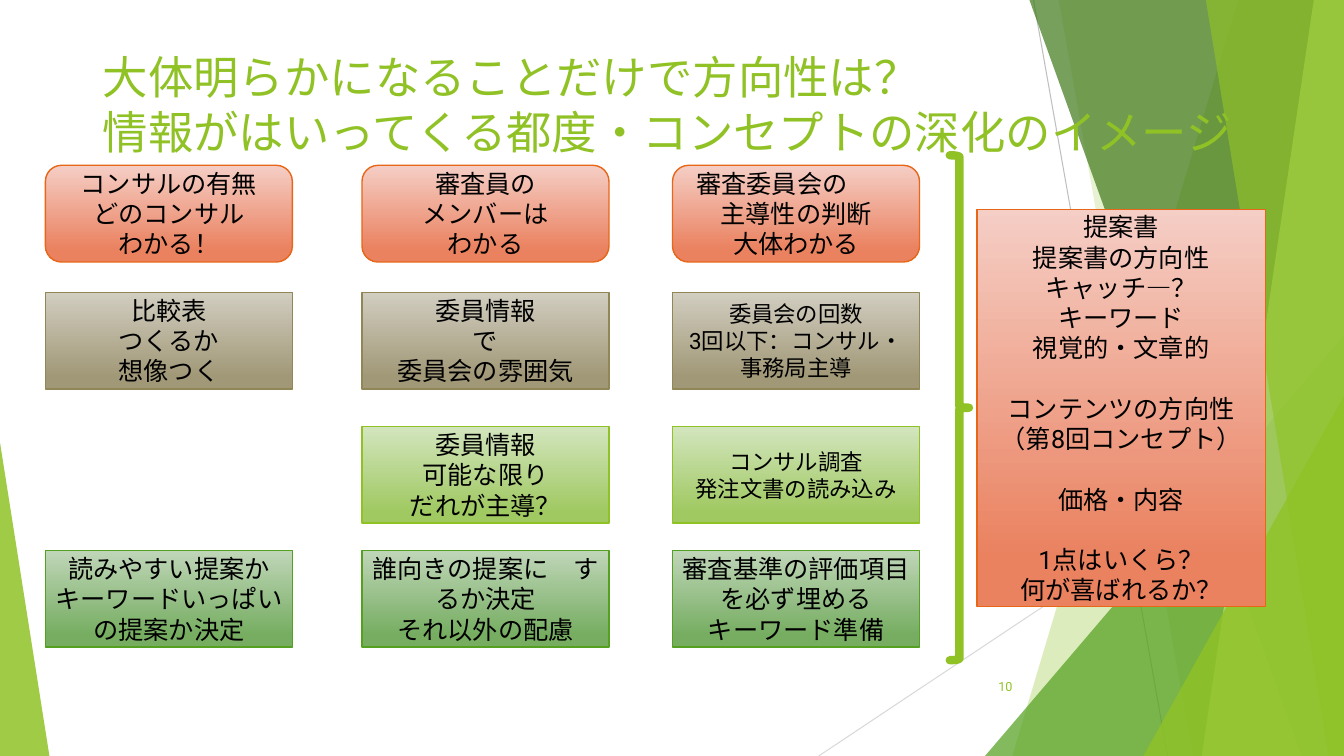
from lxml.etree import SubElement
from pptx import Presentation
from pptx.dml.color import RGBColor
from pptx.enum.shapes import MSO_CONNECTOR, MSO_SHAPE
from pptx.enum.text import MSO_ANCHOR, MSO_AUTO_SIZE, PP_ALIGN
from pptx.oxml.ns import qn
from pptx.util import Inches, Pt

FONT = "Roboto"
LIME = "90C226"
ORANGE = ("F5CEC5", "EA815F", "E76618")
COLUMN_LEFTS = (0.45, 3.59, 6.67)
CARD_WIDTH, CARD_HEIGHT = 2.45, 0.96
LINE_PITCH = 1.2

CARD_ROWS = [
    (1.64, MSO_SHAPE.ROUNDED_RECTANGLE, ORANGE, [
        (18, ["コンサルの有無", "どのコンサル", "わかる！"]),
        (18, ["審査員の", "メンバーは", "わかる"]),
        (18, ["審査委員会の", "主導性の判断", "大体わかる"]),
    ]),
    (2.9, MSO_SHAPE.RECTANGLE, ("D1CDC0", "A19877", "918655"), [
        (18, ["比較表", "つくるか", "想像つく"]),
        (18, ["委員情報", "で", "委員会の雰囲気"]),
        (16, ["委員会の回数", "3回以下：コンサル・", "事務局主導"]),
    ]),
    (4.23, MSO_SHAPE.RECTANGLE, ("D3E5BE", "A0C962", LIME), [
        None,
        (18, ["委員情報", "可能な限り", "だれが主導？"]),
        (16, ["コンサル調査", "発注文書の読み込み"]),
    ]),
    (5.46, MSO_SHAPE.RECTANGLE, ("C0D6B9", "76AD61", "54A021"), [
        (18, ["読みやすい提案か", "キーワードいっぱいの提案か決定"]),
        (18, ["誰向きの提案に　するか決定", "それ以外の配慮"]),
        (18, ["審査基準の評価項目を必ず埋める", "キーワード準備"]),
    ]),
]
PROPOSAL_GROUPS = [
    ["提案書", "提案書の方向性", "キャッチ―？", "キーワード", "視覚的・文章的"],
    ["コンテンツの方向性", "（第8回コンセプト）"],
    ["価格・内容"],
    ["1点はいくら？", "何が喜ばれるか？"],
]


def color(value):
    return RGBColor.from_string(value)


def add_run(paragraph, text, size, font_color):
    run = paragraph.add_run()
    run.text = text
    run.font.name = FONT
    run.font.size = Pt(size)
    run.font.color.rgb = color(font_color)


def fill_translucent(shape, fill_color, opacity):
    shape.shadow.inherit = False
    shape.fill.solid()
    shape.fill.fore_color.rgb = color(fill_color)
    shape.line.fill.background()
    fill = shape._element.spPr.find(qn("a:solidFill"))
    SubElement(fill[0], qn("a:alpha"), val=str(opacity * 1000))


def add_thin_line(slide, start, end, line_color):
    points = [Inches(value) for value in start + end]
    line = slide.shapes.add_connector(MSO_CONNECTOR.STRAIGHT, *points)
    line.line.color.rgb = color(line_color)
    line.line.width = Pt(0.75)
    SubElement(line._element.spPr, qn("a:effectLst"))


def add_band(slide, top_left, top_right, bottom_left, fill_color, opacity):
    corners = [(top_left, 0), (top_right, 0), (13.33, 7.5), (bottom_left, 7.5)]
    points = [(Inches(x), Inches(y)) for x, y in corners]
    builder = slide.shapes.build_freeform(*points[0], scale=1.0)
    builder.add_line_segments(points[1:], close=True)
    fill_translucent(builder.convert_to_shape(), fill_color, opacity)


def add_triangle(slide, left, top, width, apex, fill_color, opacity):
    shape = slide.shapes.add_shape(
        MSO_SHAPE.ISOSCELES_TRIANGLE,
        Inches(left), Inches(top), Inches(width), Inches(7.5 - top))
    shape.adjustments[0] = apex
    fill_translucent(shape, fill_color, opacity)


def add_backdrop(slide):
    add_thin_line(slide, (10.25, 0), (11.58, 7.5), "BFBFBF")
    add_thin_line(slide, (13.33, 4.03), (8.12, 7.5), "D9D9D9")
    add_band(slide, 12.28, 13.33, 10.04, LIME, 30)
    add_band(slide, 10.5, 13.33, 11.83, LIME, 20)
    add_triangle(slide, 9.77, 3.33, 3.56, 1, "54A021", 72)
    add_band(slide, 10.21, 13.33, 12.91, "3F7819", 70)
    add_band(slide, 13.03, 13.33, 11.92, "C0E474", 70)
    add_band(slide, 11.96, 13.33, 13.18, LIME, 65)
    add_triangle(slide, 11.34, 3.93, 1.99, 1, LIME, 80)
    add_triangle(slide, 0, 4.39, 0.49, 0, LIME, 85)


def set_title(slide, lines):
    title = slide.shapes.title
    title.left, title.top = Inches(0.92), Inches(0.44)
    title.width, title.height = Inches(11.5), Inches(1.05)
    frame = title.text_frame
    frame.auto_size = MSO_AUTO_SIZE.NONE
    frame.vertical_anchor = MSO_ANCHOR.TOP
    paragraph = frame.paragraphs[0]
    paragraph.alignment = PP_ALIGN.LEFT
    for index, line in enumerate(lines):
        if index:
            paragraph.add_line_break()
        add_run(paragraph, line, 32.4, LIME)
    slide.shapes._spTree.append(title._element)


def add_page_number(slide, number):
    box = slide.shapes.add_textbox(
        Inches(9.39), Inches(6.61), Inches(0.75), Inches(0.4))
    box.text_frame.word_wrap = True
    box.text_frame.vertical_anchor = MSO_ANCHOR.MIDDLE
    paragraph = box.text_frame.paragraphs[0]
    paragraph.alignment = PP_ALIGN.RIGHT
    add_run(paragraph, number, 9, LIME)


def add_card(slide, kind, bounds, colors, groups, size):
    shape = slide.shapes.add_shape(kind, *[Inches(value) for value in bounds])
    shape.shadow.inherit = False
    shape.fill.gradient()
    shape.fill.gradient_angle = 270
    for stop, position, stop_color in zip(
            shape.fill.gradient_stops, (0, 0.88), colors):
        stop.position = position
        stop.color.rgb = color(stop_color)
    shape.line.color.rgb = color(colors[2])
    shape.line.width = Pt(1)
    frame = shape.text_frame
    frame.word_wrap = True
    frame.vertical_anchor = MSO_ANCHOR.MIDDLE
    paragraph = None
    for group in groups:
        for index, line in enumerate(group):
            starts_group = paragraph is not None and index == 0
            paragraph = (frame.paragraphs[0] if paragraph is None
                         else frame.add_paragraph())
            paragraph.alignment = PP_ALIGN.CENTER
            if starts_group:
                paragraph.space_before = Pt(size * LINE_PITCH)
            add_run(paragraph, line, size, "000000")
    return shape


def indent_first_line(shape, indent):
    paragraph = shape.text_frame.paragraphs[0]
    paragraph.alignment = PP_ALIGN.LEFT
    paragraph._p.get_or_add_pPr().set("marL", str(Inches(indent)))


def add_cards(slide):
    for top, kind, colors, cards in CARD_ROWS:
        for left, card in zip(COLUMN_LEFTS, cards):
            if card:
                size, lines = card
                bounds = (left, top, CARD_WIDTH, CARD_HEIGHT)
                shape = add_card(slide, kind, bounds, colors, [lines], size)
                if lines[0] == "審査委員会の":
                    indent_first_line(shape, 0.09)


def add_brace(slide):
    brace = slide.shapes.add_shape(
        MSO_SHAPE.RIGHT_BRACE,
        Inches(9.42), Inches(1.54), Inches(0.19), Inches(5.01))
    brace.shadow.inherit = False
    brace.fill.background()
    brace.line.color.rgb = color(LIME)
    brace.line.width = Pt(6)
    brace._element.spPr.find(qn("a:ln")).set("cap", "rnd")


def main():
    presentation = Presentation()
    presentation.slide_width = Inches(13.33)
    presentation.slide_height = Inches(7.5)
    slide = presentation.slides.add_slide(presentation.slide_layouts[5])
    add_backdrop(slide)
    set_title(slide, ["大体明らかになることだけで方向性は？",
                      "情報がはいってくる都度・コンセプトの深化のイメージ"])
    add_page_number(slide, "10")
    add_cards(slide)
    add_brace(slide)
    add_card(slide, MSO_SHAPE.RECTANGLE, (9.69, 2.08, 2.86, 3.94),
             ORANGE, PROPOSAL_GROUPS, 18)
    presentation.save("out.pptx")


if __name__ == "__main__":
    main()
